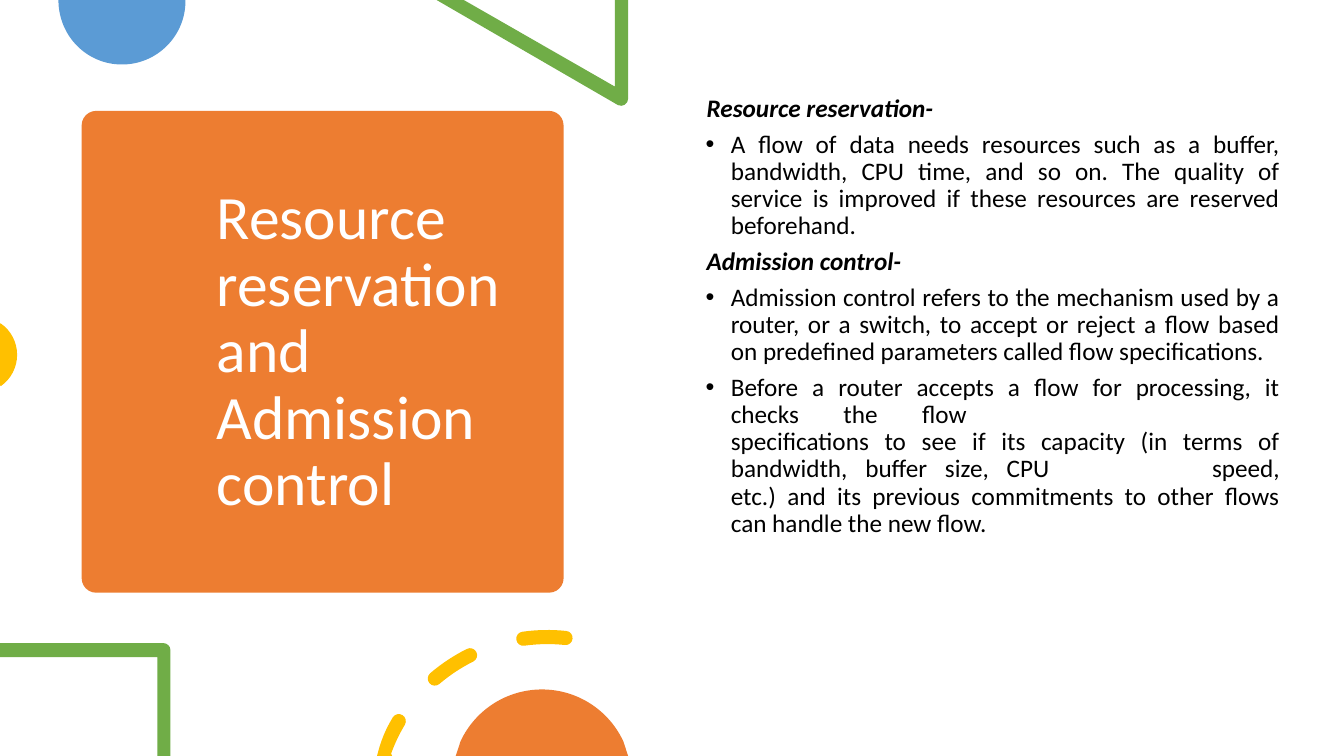
from math import ceil, cos, radians, sin, tan
from lxml.etree import SubElement
from pptx import Presentation
from pptx.dml.color import RGBColor as RGB
from pptx.enum.shapes import MSO_SHAPE as SHAPE
from pptx.enum.text import MSO_ANCHOR as ANCHOR, PP_ALIGN as ALIGN
from pptx.oxml.ns import qn
from pptx.util import Pt

# Content
TITLE = "Resource reservation and Admission control"
BODY = [
    ("head", "Resource reservation-"),
    ("item", "A flow of data needs resources such as a buffer, bandwidth, CPU time, "
             "and so on. The quality of service is improved if these resources are "
             "reserved beforehand."),
    ("head", "Admission control-"),
    ("item", "Admission control refers to the mechanism used by a router, or a switch, "
             "to accept or reject a flow based on predefined parameters called flow "
             "specifications."),
    ("item", "Before a router accepts a flow for processing, it checks the flow "
             "\tspecifications to see if its capacity (in terms of bandwidth, buffer "
             "size, CPU \tspeed, etc.) and its previous commitments to other flows can "
             "handle the new flow."),
]

# Theme and scale: 100 px to the inch
PX = 9144
THEME = {"orange": "ED7D31", "blue": "5B9BD5", "green": "70AD47", "gold": "FFC000",
         "white": "FFFFFF", "black": "000000", "font": "Calibri",
         "title": 44, "body": 18}
STYLES = {
    "title": {"font": {"size": Pt(THEME["title"])}, "color": "white",
              "align": ALIGN.LEFT, "left": 100, "hang": 0},
    "head": {"font": {"size": Pt(THEME["body"]), "bold": True, "italic": True},
             "color": "black", "align": ALIGN.LEFT, "left": 24, "hang": 0},
    "item": {"font": {"size": Pt(THEME["body"])}, "color": "black",
             "align": ALIGN.JUSTIFY, "left": 48, "hang": -25},
}
TABS = (178, 477)


# Outline geometry in px, angles clockwise from the right.
# A step of one point is a line, a step of three points is a curve.
def polar(mid, r, deg):
    return mid[0] + r * cos(radians(deg)), mid[1] + r * sin(radians(deg))


def bend(mid, r, start, end):
    count = ceil(abs(end - start) / 90)
    turn = (end - start) / count
    pull = 4 / 3 * tan(radians(turn / 4)) * r
    steps = []
    for i in range(count):
        a, b = start + i * turn, start + (i + 1) * turn
        p, q = polar(mid, r, a), polar(mid, r, b)
        steps.append((polar(p, pull, a + 90), polar(q, -pull, b + 90), q))
    return steps


def arc(mid, r, start, end):
    return [(polar(mid, r, start),)] + bend(mid, r, start, end)


def lines(*points):
    return [(p,) for p in points]


RING, RAD, HALF = (543, 804), 172, 7


def cap(deg, turn):
    return bend(polar(RING, RAD, deg), HALF, deg + turn, deg + turn + 180)


def dash(start, end):
    return (arc(RING, RAD + HALF, start, end) + cap(end, 0)
            + bend(RING, RAD - HALF, end, start) + cap(start, 180))


CUT = (lines((374, 750)) + bend(RING, RAD + HALF, 199, 211) + cap(211, 0)
       + bend(RING, RAD - HALF, 211, 200) + lines((389, 750)))
ABOVE = [
    ("blue", [lines((184, 0), (58, 0)) + bend((121, 1), 63, 180, 0)]),
    ("green", [lines((623, 0), (610, 0), (610, 86), (460, 0), (433, 0))
               + arc((616, 98), 7, 115, 0)]),
    ("gold", [lines((0, 321), (0, 382)) + arc((-21, 352), 38, 55, -55)]),
]
BELOW = [
    ("green", [lines((0, 638), (0, 652), (156, 652), (156, 750), (169, 750))
               + arc((162, 645), 7, 0, -90)]),
    ("gold", [CUT, dash(229.5, 243.5), dash(262, 276)]),
    ("orange", [lines((452, 750)) + arc((537.5, 773), 89, 205, 335)
                + lines((623, 750))]),
]


def paint(shape, color):
    shape.shadow.inherit = False
    shape.fill.solid()
    shape.fill.fore_color.rgb = RGB.from_string(THEME[color])
    shape.line.fill.background()


def outline(shapes, color, loops):
    pen, sizes = None, []
    for loop in loops:
        dots = [(round(x * PX), round(y * PX)) for step in loop for x, y in step]
        if pen:
            pen.move_to(*dots[0])
        else:
            pen = shapes.build_freeform(*dots[0])
        pen.add_line_segments(dots[1:], close=True)
        sizes += [len(step) for step in loop[1:]]
    shape = pen.convert_to_shape()
    # Join each run of three points into a curve
    legs = iter(list(shape._element.iter(qn("a:lnTo"))))
    for size in sizes:
        leg = next(legs)
        if size == 3:
            leg.tag = qn("a:cubicBezTo")
            for _ in range(2):
                more = next(legs)
                leg.append(more[0])
                more.getparent().remove(more)
    paint(shape, color)


def write(shapes, box, rows, anchor):
    frame = shapes.add_textbox(*(n * PX for n in box)).text_frame
    frame.word_wrap, frame.vertical_anchor = True, anchor
    for i, (kind, text) in enumerate(rows):
        para = frame.add_paragraph() if i else frame.paragraphs[0]
        style = STYLES[kind]
        form = {"alignment": style["align"], "line_spacing": 0.9, "space_after": Pt(6)}
        for key, val in form.items():
            setattr(para, key, val)
        prop = para._p.get_or_add_pPr()
        prop.set("marL", str(style["left"] * PX))
        prop.set("indent", str(style["hang"] * PX))
        if style["hang"]:
            SubElement(prop, qn("a:buFont")).set("typeface", "Arial")
            SubElement(prop, qn("a:buChar")).set("char", "•")
        if "\t" in text:
            stops = SubElement(prop, qn("a:tabLst"))
            for pos in TABS:
                SubElement(stops, qn("a:tab"), pos=str(pos * PX), algn="l")
        run = para.add_run()
        run.text = text
        for key, val in {"name": THEME["font"], **style["font"]}.items():
            setattr(run.font, key, val)
        run.font.color.rgb = RGB.from_string(THEME[style["color"]])


def main():
    deck = Presentation()
    deck.slide_width, deck.slide_height = 1333 * PX, 750 * PX
    shapes = deck.slides.add_slide(deck.slide_layouts[6]).shapes

    # Title card
    card = shapes.add_shape(SHAPE.ROUNDED_RECTANGLE,
                            *(n * PX for n in (81, 110, 478, 478)))
    card.adjustments[0] = 0.03
    paint(card, "orange")
    write(shapes, (105, 122, 431, 456), [("title", TITLE)], ANCHOR.MIDDLE)

    # Decoration and body text
    for color, loops in ABOVE:
        outline(shapes, color, loops)
    write(shapes, (667, 90, 612, 535), BODY, ANCHOR.TOP)
    for color, loops in BELOW:
        outline(shapes, color, loops)
    deck.save("out.pptx")


if __name__ == "__main__":
    main()
